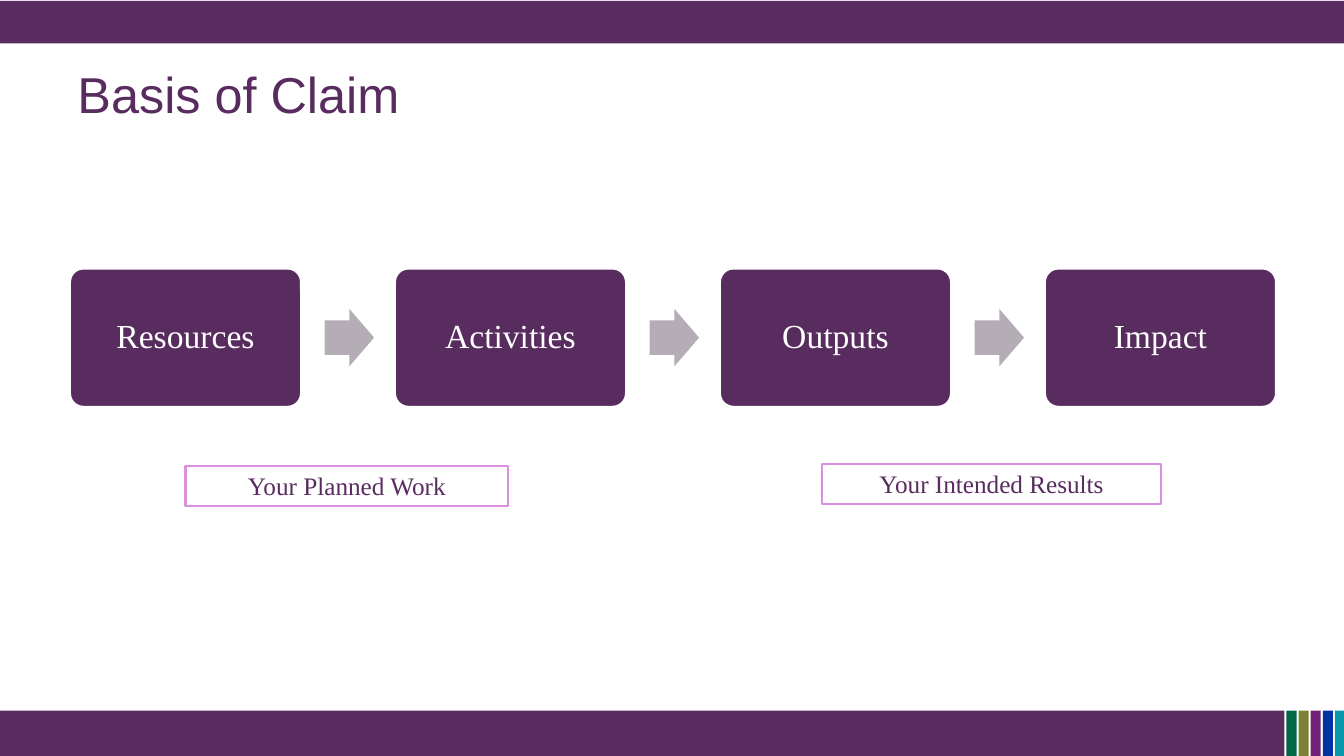
import pptx
import pptx.util
import pptx.dml.color
import pptx.enum.shapes
import pptx.enum.text

TITLE = "Basis of Claim"
STEPS = ["Resources", "Activities", "Outputs", "Impact"]
# caption, left, top, width
CAPTIONS = [
    ("Your Planned Work", 1.84, 4.62, 3.2),
    ("Your Intended Results", 8.15, 4.6, 3.37),
]
COLORS = {
    "plum": "592C5F", "white": "FFFFFF", "arrow": "B5ADB6", "orchid": "DA8FE0",
    "green": "006647", "olive": "7E8034", "violet": "712177",
    "blue": "0033A0", "teal": "0996A9",
}
STRIPES = ["green", "olive", "violet", "blue", "teal"]

SLIDE_W, SLIDE_H = 13.33, 7.5
FOOTER_H = 0.45
FOOTER_TOP = SLIDE_H - FOOTER_H
STRIPE_W, STRIPE_PITCH = 0.1, 0.12
STRIPES_LEFT = 12.76
STEP_LEFT, STEP_TOP, STEP_W, STEP_H = 0.69, 2.66, 2.3, 1.38
LAST_STEP_LEFT = 10.36
STEP_PITCH = (LAST_STEP_LEFT - STEP_LEFT) / (len(STEPS) - 1)
ARROW_W, ARROW_H, ARROW_GAP = 0.49, 0.57, 0.23
CAPTION_H = 0.4

Inches, Pt = pptx.util.Inches, pptx.util.Pt
SHAPE = pptx.enum.shapes.MSO_SHAPE
ALIGN = pptx.enum.text.PP_ALIGN

presentation = pptx.Presentation()
presentation.slide_width = Inches(SLIDE_W)
presentation.slide_height = Inches(SLIDE_H)
slide = presentation.slides.add_slide(presentation.slide_layouts[6])


def rgb(name):
    return pptx.dml.color.RGBColor.from_string(COLORS[name])


def add_block(kind, left, top, width, height, fill, line=None, line_pt=0, adjust=()):
    block = slide.shapes.add_shape(
        kind, Inches(left), Inches(top), Inches(width), Inches(height))
    block.shadow.inherit = False
    block.fill.solid()
    block.fill.fore_color.rgb = rgb(fill)
    if line:
        block.line.color.rgb = rgb(line)
        block.line.width = Pt(line_pt)
    else:
        block.line.fill.background()
    for index, value in enumerate(adjust):
        block.adjustments[index] = value
    return block


def write(holder, text, size, font, color, align, spacing=1.0):
    frame = holder.text_frame
    frame.word_wrap = True
    frame.vertical_anchor = pptx.enum.text.MSO_ANCHOR.MIDDLE
    paragraph = frame.paragraphs[0]
    paragraph.alignment = align
    paragraph.line_spacing = spacing
    run = paragraph.add_run()
    run.text = text
    for attribute, value in {"size": Pt(size), "name": font}.items():
        setattr(run.font, attribute, value)
    run.font.color.rgb = rgb(color)


# Header and footer bands
add_block(SHAPE.RECTANGLE, 0, FOOTER_TOP, 12.74, FOOTER_H, "plum")
for i, stripe_color in enumerate(STRIPES):
    add_block(SHAPE.RECTANGLE, STRIPES_LEFT + i * STRIPE_PITCH, FOOTER_TOP,
              STRIPE_W, FOOTER_H, stripe_color)
add_block(SHAPE.RECTANGLE, 0, 0.01, SLIDE_W, 0.42, "plum")

title = slide.shapes.add_textbox(Inches(0.67), Inches(0.3), Inches(12), Inches(1.25))
write(title, TITLE, 36, "Arial", "plum", ALIGN.LEFT)

# Chain of steps, with an arrow in each gap
for i, step_name in enumerate(STEPS):
    left = STEP_LEFT + i * STEP_PITCH
    step = add_block(SHAPE.ROUNDED_RECTANGLE, left, STEP_TOP, STEP_W, STEP_H,
                     "plum", "white", 2, [0.1])
    write(step, step_name, 24, "Times New Roman", "white", ALIGN.CENTER, 0.9)
    if i < len(STEPS) - 1:
        add_block(SHAPE.RIGHT_ARROW, left + STEP_W + ARROW_GAP,
                  STEP_TOP + (STEP_H - ARROW_H) / 2, ARROW_W, ARROW_H,
                  "arrow", adjust=[0.6, 0.5])

for text, left, top, width in CAPTIONS:
    caption = add_block(SHAPE.RECTANGLE, left, top, width, CAPTION_H,
                        "white", "orchid", 1.5)
    write(caption, text, 18, "Times New Roman", "plum", ALIGN.CENTER)

presentation.save("out.pptx")
